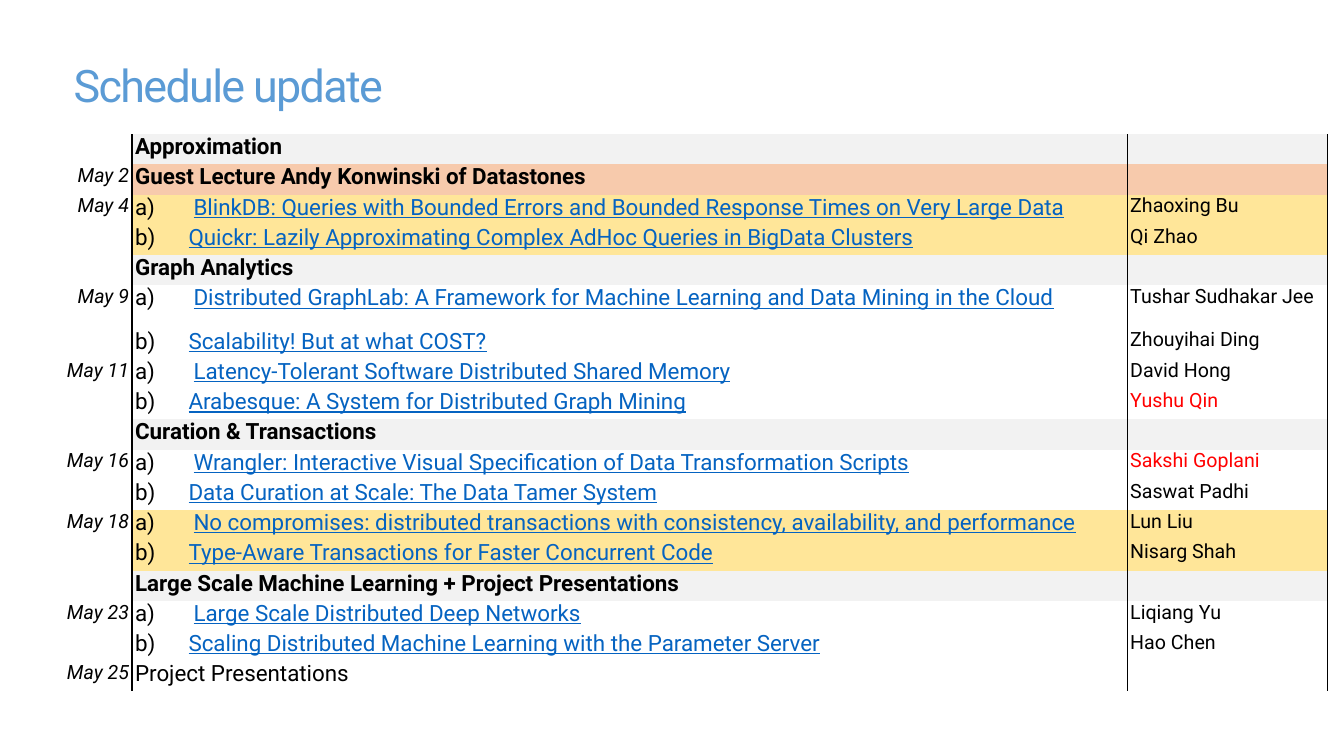
"""Build the course schedule slide with one table of dates, topics and presenters."""
import lxml.etree
import pptx
import pptx.dml.color
import pptx.enum.text
import pptx.oxml.ns
import pptx.util

Inches = pptx.util.Inches
Pt = pptx.util.Pt
ALIGN = pptx.enum.text.PP_ALIGN

FONT = "Roboto"
BLACK, RED, LINK, TITLE_BLUE = "000000", "FF0000", "0563C1", "5B9BD5"
WHITE, GREY, ORANGE, YELLOW = "FFFFFF", "F2F2F2", "F7CAAC", "FFE699"
PLAIN_STYLE = "{2D5ABB26-0587-4C30-8999-92F81FD0307C}"

TITLE = "Schedule update"
COLUMN_WIDTHS = (0.76, 9.87, 1.99)
ROW_HEIGHT = 0.3
TALL_ROWS = {5: 0.43}
TITLE_INDENTS = {"a)": 0.58, "b)": 0.53}
CHANGED_PRESENTERS = ("Yushu Qin", "Sakshi Goplani")

# Each row holds date, label, topic, presenter and fill.
SCHEDULE = [
    ("", "", "Approximation", "", GREY),
    ("May 2", "", "Guest Lecture Andy Konwinski of Datastones", "", ORANGE),
    ("May 4", "a)", "BlinkDB: Queries with Bounded Errors and Bounded Response Times on Very Large Data",
     "Zhaoxing Bu", YELLOW),
    ("", "b)", "Quickr: Lazily Approximating Complex AdHoc Queries in BigData Clusters", "Qi Zhao", YELLOW),
    ("", "", "Graph Analytics", "", GREY),
    ("May 9", "a)", "Distributed GraphLab: A Framework for Machine Learning and Data Mining in the Cloud",
     "Tushar Sudhakar Jee", None),
    ("", "b)", "Scalability! But at what COST?", "Zhouyihai Ding", None),
    ("May 11", "a)", "Latency-Tolerant Software Distributed Shared Memory", "David Hong", None),
    ("", "b)", "Arabesque: A System for Distributed Graph Mining", "Yushu Qin", None),
    ("", "", "Curation & Transactions", "", GREY),
    ("May 16", "a)", "Wrangler: Interactive Visual Speciﬁcation of Data Transformation Scripts",
     "Sakshi Goplani", None),
    ("", "b)", "Data Curation at Scale: The Data Tamer System", "Saswat Padhi", None),
    ("May 18", "a)", "No compromises: distributed transactions with consistency, availability, and performance",
     "Lun Liu", YELLOW),
    ("", "b)", "Type-Aware Transactions for Faster Concurrent Code", "Nisarg Shah", YELLOW),
    ("", "", "Large Scale Machine Learning + Project Presentations", "", GREY),
    ("May 23", "a)", "Large Scale Distributed Deep Networks", "Liqiang Yu", None),
    ("", "b)", "Scaling Distributed Machine Learning with the Parameter Server", "Hao Chen", None),
    ("May 25", "", "Project Presentations", "", None),
]


def color(value):
    return pptx.dml.color.RGBColor.from_string(value)


def add_element(parent, tag, **attributes):
    return lxml.etree.SubElement(parent, pptx.oxml.ns.qn(tag), **attributes)


def add_run(paragraph, text, size, text_color=BLACK, bold=False, italic=False, underline=False):
    run = paragraph.add_run()
    run.text = text
    font = run.font
    font.name, font.size = FONT, Pt(size)
    font.bold, font.italic, font.underline = bold, italic, underline
    font.color.rgb = color(text_color)
    return run


def format_cell(cell, fill, sides):
    cell.margin_left = cell.margin_right = Inches(0.03)
    cell.margin_top = cell.margin_bottom = 0
    properties = cell._tc.get_or_add_tcPr()
    for side in sides:
        line = add_element(properties, side, w=str(Pt(1)))
        add_element(add_element(line, "a:solidFill"), "a:srgbClr", val=BLACK)
    if fill:
        cell.fill.solid()
        cell.fill.fore_color.rgb = color(fill)
    else:
        cell.fill.background()
    paragraph = cell.text_frame.paragraphs[0]
    if not paragraph.runs:
        add_element(paragraph._p, "a:endParaRPr", sz="1400")


def write_topic(paragraph, label, topic, fill):
    if not label:
        add_run(paragraph, topic, 16, bold=fill is not None)
        return
    indent = Inches(TITLE_INDENTS[label])
    properties = paragraph._p.get_or_add_pPr()
    properties.set("marL", str(indent))
    properties.set("indent", str(-indent))
    add_run(paragraph, label + "\t", 16)
    add_run(paragraph, topic, 16, LINK, underline=True)


def add_title(slide):
    title = slide.shapes.title
    title.left, title.top, title.width, title.height = map(Inches, (0.63, 0.55, 11.87, 0.66))
    title.text_frame.vertical_anchor = pptx.enum.text.MSO_ANCHOR.MIDDLE
    paragraph = title.text_frame.paragraphs[0]
    paragraph.alignment = ALIGN.LEFT
    paragraph.line_spacing = 0.85
    run = add_run(paragraph, TITLE, 32, TITLE_BLUE)
    run.font._element.set("spc", "-120")


def add_schedule(slide):
    heights = [TALL_ROWS.get(index, ROW_HEIGHT) for index in range(len(SCHEDULE))]
    frame = slide.shapes.add_table(len(SCHEDULE), len(COLUMN_WIDTHS), Inches(0.55), Inches(1.33),
                                   Inches(sum(COLUMN_WIDTHS)), Inches(sum(heights)))
    table = frame.table
    table.first_row = table.horz_banding = False
    table._tbl.tblPr.find(pptx.oxml.ns.qn("a:tableStyleId")).text = PLAIN_STYLE
    for column, width in zip(table.columns, COLUMN_WIDTHS):
        column.width = Inches(width)
    for row, height, (date, label, topic, presenter, fill) in zip(table.rows, heights, SCHEDULE):
        row.height = Inches(height)
        date_cell, topic_cell, presenter_cell = row.cells
        if date:
            paragraph = date_cell.text_frame.paragraphs[0]
            paragraph.alignment = ALIGN.RIGHT
            add_run(paragraph, date, 14, italic=True)
        write_topic(topic_cell.text_frame.paragraphs[0], label, topic, fill)
        if presenter:
            presenter_color = RED if presenter in CHANGED_PRESENTERS else BLACK
            add_run(presenter_cell.text_frame.paragraphs[0], presenter, 14, presenter_color)
        format_cell(date_cell, WHITE, ["a:lnR"])
        for cell in (topic_cell, presenter_cell):
            format_cell(cell, fill, ["a:lnL", "a:lnR"])


def main():
    presentation = pptx.Presentation()
    presentation.slide_width, presentation.slide_height = Inches(13.33), Inches(7.5)
    slide = presentation.slides.add_slide(presentation.slide_layouts[5])
    add_title(slide)
    add_schedule(slide)
    presentation.save("out.pptx")


if __name__ == "__main__":
    main()
